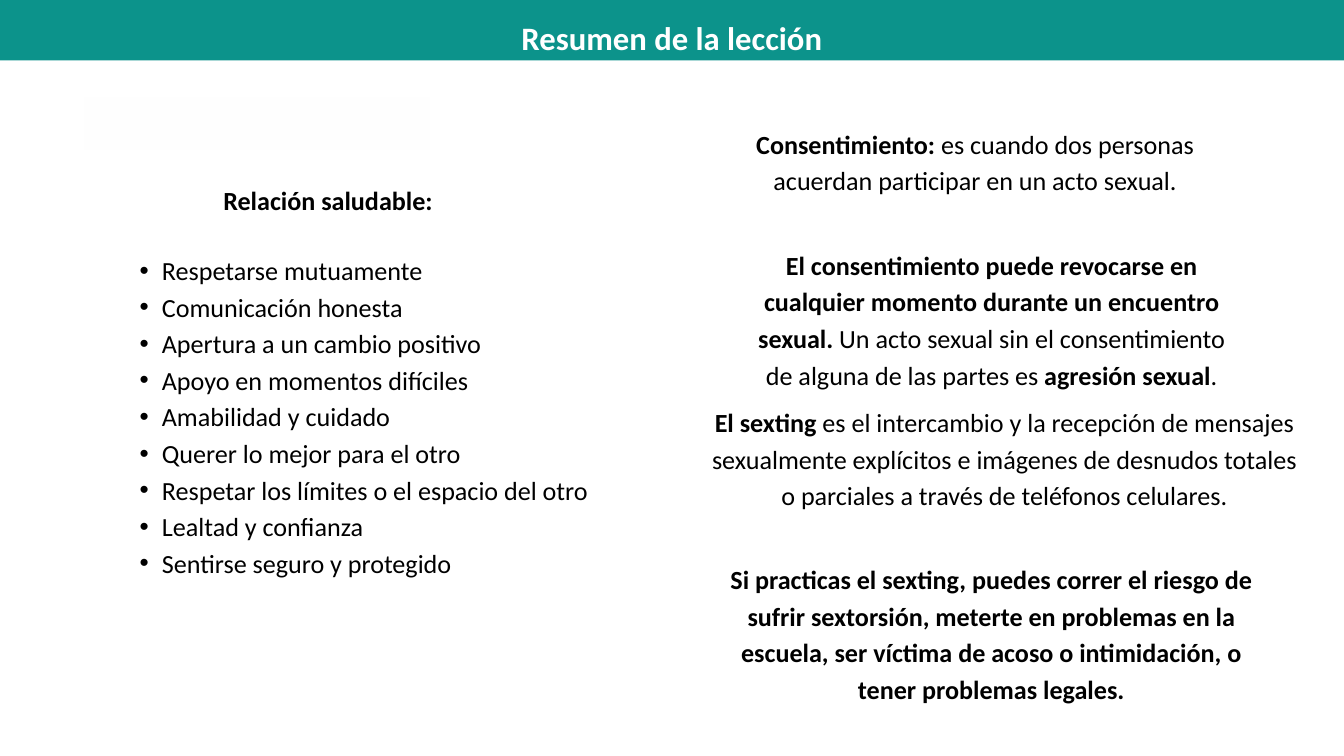
import pptx
import pptx.util
import pptx.dml.color
import pptx.enum.shapes
import pptx.enum.text
import pptx.oxml.ns
import lxml.etree

Inches = pptx.util.Inches
Pt = pptx.util.Pt
ALIGN = pptx.enum.text.PP_ALIGN
FONT = "Calibri"
TEAL, PALE, WHITE, BLACK = "0C938B", "FEFEFE", "FFFFFF", "000000"

HABITS = [
    "Respetarse mutuamente",
    "Comunicación honesta",
    "Apertura a un cambio positivo",
    "Apoyo en momentos difíciles",
    "Amabilidad y cuidado",
    "Querer lo mejor para el otro",
    "Respetar los límites o el espacio del otro",
    "Lealtad y confianza",
    "Sentirse seguro y protegido",
]

# Each note: its box within the right column, then its (text, bold) runs
NOTES = [
    ((0.55, 0, 7, 1.62), [
        ("Consentimiento:", True),
        (" es cuando dos personas acuerdan participar en un acto sexual.", False)]),
    ((0.7, 1.8, 7.19, 2.71), [
        ("El consentimiento puede revocarse en cualquier momento durante "
         "un encuentro sexual.", True),
        (" Un acto sexual sin el consentimiento de alguna de las partes es ", False),
        ("agresión sexual", True),
        (".", False)]),
    ((0, 4.14, 8.97, 2.16), [
        ("El sexting ", True),
        ("es el intercambio y la recepción de mensajes sexualmente explícitos "
         "e imágenes de desnudos totales o parciales a través de teléfonos "
         "celulares.", False)]),
    ((0.36, 6.48, 7.86, 2.71), [
        ("Si practicas el sexting, puedes correr el riesgo de sufrir "
         "sextorsión, meterte en problemas en la escuela, ser víctima de acoso "
         "o intimidación, o tener problemas legales.", True)]),
]


def color(code):
    return pptx.dml.color.RGBColor.from_string(code)


def add_block(slide, box, fill):
    """Plain filled rectangle without outline."""
    kind = pptx.enum.shapes.MSO_SHAPE.RECTANGLE
    block = slide.shapes.add_shape(kind, *map(Inches, box))
    block.shadow.inherit = False
    block.fill.solid()
    block.fill.fore_color.rgb = color(fill)
    block.line.fill.background()


def add_bullet(para):
    """Hanging bullet for one paragraph."""
    props = para._p.get_or_add_pPr()
    props.set("marL", str(Inches(0.66)))
    props.set("indent", str(Inches(-0.33)))
    for tag, key, value in (("a:buFont", "typeface", "Arial"),
                            ("a:buChar", "char", "•")):
        item = lxml.etree.SubElement(props, pptx.oxml.ns.qn(tag))
        item.set(key, value)


def add_text(slide, box, paras, size=28, lead=39.2, ink=BLACK, bullets=False):
    """Text box; each paragraph is a list of (text, bold) runs."""
    frame = slide.shapes.add_textbox(*map(Inches, box)).text_frame
    frame.word_wrap = True
    frame.auto_size = pptx.enum.text.MSO_AUTO_SIZE.SHAPE_TO_FIT_TEXT
    frame.margin_left = frame.margin_right = 0
    frame.margin_top = frame.margin_bottom = 0
    for i, parts in enumerate(paras):
        para = frame.add_paragraph() if i else frame.paragraphs[0]
        if bullets:
            para.level = 1
            add_bullet(para)
        else:
            para.alignment = ALIGN.CENTER
        para.line_spacing = Pt(lead)
        for text, bold in parts:
            run = para.add_run()
            run.text = text
            run.font.name = FONT
            run.font.size = Pt(size)
            run.font.bold = bold
            run.font.color.rgb = color(ink)


def add_header(slide, box):
    left, top, width, height = box
    add_block(slide, box, TEAL)
    add_text(slide, (left, top - 0.12, width, 0.87),
             [[("Resumen de la lección", True)]], size=35, lead=70, ink=WHITE)


def add_habits(slide, box):
    left, top, width, height = box
    add_text(slide, (left, top, 8.18, 0.53), [[("Relación saludable:", True)]])
    add_text(slide, (left + 0.96, top + 1.04, width - 0.96, height - 1.04),
             [[(habit, False)] for habit in HABITS], bullets=True)


def add_notes(slide, box):
    left, top = box[:2]
    for (x, y, width, height), parts in NOTES:
        add_text(slide, (left + x, top + y, width, height), [parts])


def main():
    deck = pptx.Presentation()
    deck.slide_width, deck.slide_height = Inches(20), Inches(11.25)
    slide = deck.slides.add_slide(deck.slide_layouts[6])
    # Faint panel, then title band and the two columns
    add_block(slide, (1.26, 1.45, 5.13, 0.78), PALE)
    add_header(slide, (0, 0, 20, 0.9))
    add_habits(slide, (0.79, 2.67, 8.29, 6.47))
    add_notes(slide, (10.46, 1.83, 8.97, 9.19))
    deck.save("out.pptx")


if __name__ == "__main__":
    main()
